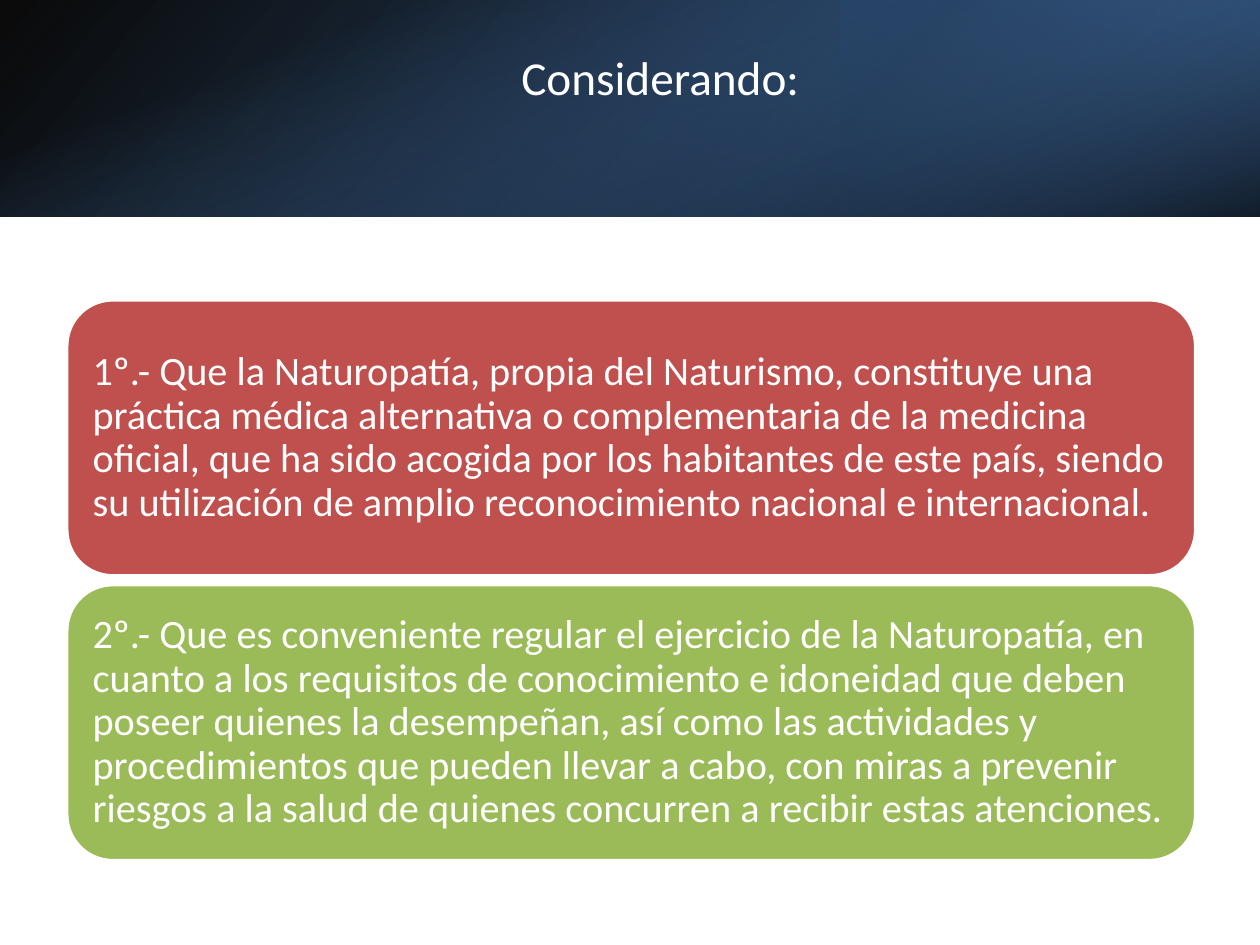
from lxml.etree import SubElement
from pptx import Presentation
from pptx.dml.color import RGBColor
from pptx.enum.shapes import MSO_SHAPE
from pptx.enum.text import MSO_ANCHOR, PP_ALIGN
from pptx.oxml import parse_xml
from pptx.oxml.ns import nsdecls, qn
from pptx.util import Inches, Pt

COLORS = {
    "white": "FFFFFF", "black": "000000", "navy": "376092", "deep": "254061",
    "blue": "4F81BD", "red": "C0504D", "green": "9BBB59",
}


def add_box(page, preset, bounds):
    box = page.shapes.add_shape(preset, *[Inches(value) for value in bounds])
    box.shadow.inherit = False
    return box


def format_text(shape, size, align):
    shape.text_frame.vertical_anchor = MSO_ANCHOR.MIDDLE
    shape.text_frame.word_wrap = True
    para = shape.text_frame.paragraphs[0]
    para.alignment = align
    para.line_spacing = 0.9
    para.font.size = Pt(size)
    para.font.name = "Calibri"
    para.font.color.rgb = RGBColor.from_string(COLORS["white"])


deck = Presentation()
deck.slide_width, deck.slide_height = Inches(10), Inches(7.5)
page = deck.slides.add_slide(deck.slide_layouts[5])

bands = [
    ((0, 0, 10, 1.72), 0, True, 140, [(0, "black", 96), (100, "navy", 100)]),
    ((6.67, 0, 3.33, 1.72), 180, True, 320, [(19, "deep", 68), (100, "blue", 79)]),
    ((4.14, -4.14, 1.72, 10), 90, False, 340, [(23, "blue", 0), (99, "black", 74)]),
]
for bounds, rotation, flipped, angle, stops in bands:
    band = add_box(page, MSO_SHAPE.RECTANGLE, bounds)
    band.rotation = rotation
    band.line.fill.background()
    properties = band._element.spPr
    if flipped:
        properties.find(qn("a:xfrm")).set("flipH", "1")
    gradient = parse_xml(f'<a:gradFill {nsdecls("a")} rotWithShape="1"/>')
    stop_list = SubElement(gradient, qn("a:gsLst"))
    for position, color, opacity in stops:
        stop = SubElement(stop_list, qn("a:gs"), pos=str(position * 1000))
        tint = SubElement(stop, qn("a:srgbClr"), val=COLORS[color])
        SubElement(tint, qn("a:alpha"), val=str(opacity * 1000))
    SubElement(gradient, qn("a:lin"), ang=str(angle * 60000), scaled="0")
    properties.find(qn("a:prstGeom")).addnext(gradient)

title = page.shapes.title
page.shapes._spTree.append(title._element)
title.left, title.top = Inches(1.12), Inches(0.38)
title.width, title.height = Inches(8.24), Inches(0.96)
title.text_frame.text = "Considerando:\v"
format_text(title, 27, PP_ALIGN.CENTER)

clauses = [
    ("red", "1º.- Que la Naturopatía, propia del Naturismo, constituye una práctica médica "
            "alternativa o complementaria de la medicina oficial, que ha sido acogida por los "
            "habitantes de este país, siendo su utilización de amplio reconocimiento nacional "
            "e internacional."),
    ("green", "2º.- Que es conveniente regular el ejercicio de la Naturopatía, en cuanto a los "
              "requisitos de conocimiento e idoneidad que deben poseer quienes la desempeñan, "
              "así como las actividades y procedimientos que pueden llevar a cabo, con miras a "
              "prevenir riesgos a la salud de quienes concurren a recibir estas atenciones."),
]
for index, (color, wording) in enumerate(clauses):
    clause = add_box(page, MSO_SHAPE.ROUNDED_RECTANGLE, (0.53, 2.38 + 2.26 * index, 8.96, 2.19))
    clause.fill.solid()
    clause.fill.fore_color.rgb = RGBColor.from_string(COLORS[color])
    clause.line.color.rgb = RGBColor.from_string(COLORS["white"])
    clause.line.width = Pt(2)
    frame = clause.text_frame
    frame.margin_left = frame.margin_right = Inches(0.1)
    frame.margin_top = frame.margin_bottom = Inches(0.1)
    frame.text = wording
    format_text(clause, 23, PP_ALIGN.LEFT)

deck.save("out.pptx")
